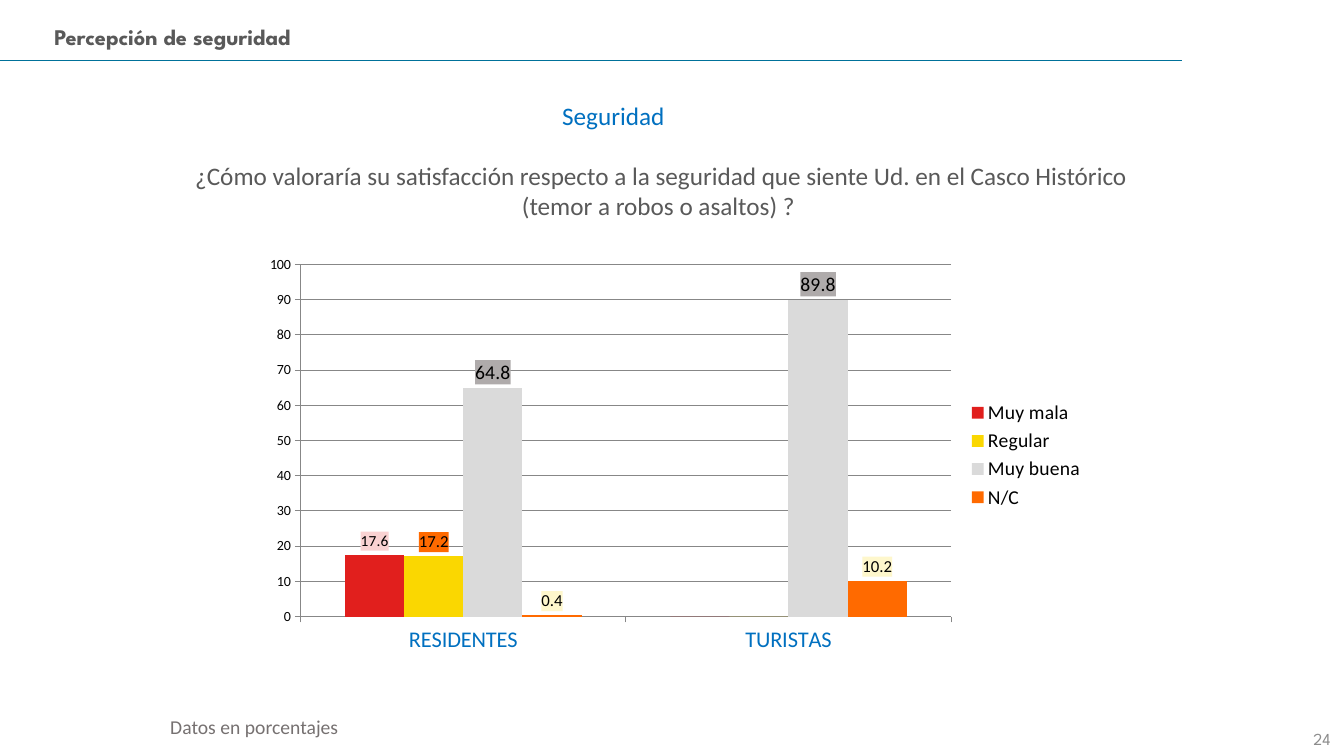
from lxml import etree
from pptx import Presentation
from pptx.chart.data import CategoryChartData
from pptx.dml.color import RGBColor
from pptx.enum.chart import XL_CHART_TYPE, XL_LABEL_POSITION, XL_LEGEND_POSITION, XL_TICK_MARK
from pptx.enum.shapes import MSO_CONNECTOR
from pptx.enum.text import MSO_ANCHOR, PP_ALIGN
from pptx.oxml import parse_xml
from pptx.oxml.ns import nsdecls, qn
from pptx.util import Pt

LEFT, CENTER, RIGHT = PP_ALIGN.LEFT, PP_ALIGN.CENTER, PP_ALIGN.RIGHT
TOP, BOTTOM = MSO_ANCHOR.TOP, MSO_ANCHOR.BOTTOM
OUTSIDE, NO_TICK = XL_TICK_MARK.OUTSIDE, XL_TICK_MARK.NONE

BLACK = RGBColor(0x00, 0x00, 0x00)
TEAL = RGBColor(0x00, 0x71, 0x9A)
BLUE = RGBColor(0x00, 0x70, 0xC0)
DARK_GRAY = RGBColor(0x59, 0x59, 0x59)
NOTE_GRAY = RGBColor(0x76, 0x71, 0x71)
NUMBER_GRAY = RGBColor(0x8C, 0x8C, 0x8C)
AXIS_GRAY = RGBColor(0x87, 0x87, 0x87)
RED = RGBColor(0xE1, 0x1F, 0x1D)
YELLOW = RGBColor(0xFA, 0xD7, 0x01)
LIGHT_GRAY = RGBColor(0xDA, 0xDA, 0xDA)
ORANGE = RGBColor(0xFF, 0x6A, 0x00)
PINK = RGBColor(0xF9, 0xD2, 0xD2)
MID_GRAY = RGBColor(0xAF, 0xAB, 0xAB)
CREAM = RGBColor(0xFE, 0xF7, 0xCC)

HEADING_FONT, BODY_FONT = "League Spartan", "Calibri"

CATEGORIES = ["RESIDENTES", "TURISTAS"]
# name, values, bar colour, label fill, label size
RATINGS = [
    ("Muy mala", (17.6, 0), RED, PINK, 11),
    ("Regular", (17.2, 0), YELLOW, ORANGE, 12),
    ("Muy buena", (64.8, 89.8), LIGHT_GRAY, MID_GRAY, 14),
    ("N/C", (0.4, 10.2), ORANGE, CREAM, 12),
]


class SlideBuilder:
    def __init__(self, slide):
        self.slide = slide

    def style_font(self, font, size, color, name=BODY_FONT, bold=False):
        font.size, font.name, font.bold = Pt(size), name, bold
        font.color.rgb = color

    def text(self, box, words, size, color, align=LEFT, anchor=TOP, name=BODY_FONT, bold=False):
        shape = self.slide.shapes.add_textbox(*map(Pt, box))
        frame = shape.text_frame
        frame.word_wrap = True
        frame.vertical_anchor = anchor
        paragraph = frame.paragraphs[0]
        paragraph.alignment = align
        run = paragraph.add_run()
        run.text = words
        self.style_font(run.font, size, color, name, bold)

    def line(self, start, end, color, width):
        connector = self.slide.shapes.add_connector(
            MSO_CONNECTOR.STRAIGHT, *map(Pt, start + end))
        connector.line.color.rgb = color
        connector.line.width = Pt(width)
        properties = connector._element.spPr
        etree.SubElement(properties, qn("a:effectLst"))

    def style_axis(self, axis, size, color):
        axis.major_tick_mark = OUTSIDE
        axis.minor_tick_mark = NO_TICK
        axis.format.line.color.rgb = AXIS_GRAY
        self.style_font(axis.tick_labels.font, size, color)

    def style_series(self, series, values, color, label_fill, label_size):
        series.format.fill.solid()
        series.format.fill.fore_color.rgb = color
        series.invert_if_negative = False
        labels = series.data_labels
        labels.show_value = True
        labels.number_format = "#,##0.0"
        labels.number_format_is_linked = False
        labels.position = XL_LABEL_POSITION.OUTSIDE_END
        self.style_font(labels.font, label_size, BLACK)
        # Label background, and no label on empty bars
        element = series._element.find(qn("c:dLbls"))
        element.find(qn("c:txPr")).addprevious(parse_xml(
            f'<c:spPr {nsdecls("c", "a")}><a:solidFill><a:srgbClr val="{label_fill}"/>'
            '</a:solidFill></c:spPr>'))
        hidden = [index for index, value in enumerate(values) if value == 0]
        for position, index in enumerate(hidden):
            element.insert(position, parse_xml(
                f'<c:dLbl {nsdecls("c")}><c:idx val="{index}"/><c:delete val="1"/></c:dLbl>'))

    def place_plot(self, chart, **fractions):
        area = chart._chartSpace.find(".//" + qn("c:plotArea"))
        for layout in area.findall(qn("c:layout")):
            area.remove(layout)
        sizes = "".join(f'<c:{key} val="{value}"/>' for key, value in fractions.items())
        area.insert(0, parse_xml(
            f'<c:layout {nsdecls("c")}><c:manualLayout><c:layoutTarget val="inner"/>'
            f'<c:xMode val="edge"/><c:yMode val="edge"/>{sizes}</c:manualLayout></c:layout>'))

    def column_chart(self, box, categories, ratings):
        data = CategoryChartData()
        data.categories = categories
        for name, values, *_ in ratings:
            data.add_series(name, values)
        chart = self.slide.shapes.add_chart(
            XL_CHART_TYPE.COLUMN_CLUSTERED, *map(Pt, box), data).chart
        self.style_font(chart.font, 10, BLACK)
        chart.has_title = False
        # Axes
        self.style_axis(chart.category_axis, 16, BLUE)
        value_axis = chart.value_axis
        self.style_axis(value_axis, 10, BLACK)
        value_axis.minimum_scale, value_axis.maximum_scale = 0, 100
        value_axis.major_unit = 10
        value_axis.major_gridlines.format.line.color.rgb = AXIS_GRAY
        # Legend
        chart.has_legend = True
        chart.legend.position = XL_LEGEND_POSITION.RIGHT
        chart.legend.include_in_layout = False
        self.style_font(chart.legend.font, 14, BLACK)
        # Columns
        plot = chart.plots[0]
        plot.gap_width, plot.overlap = 150, 0
        plot.vary_by_categories = False
        for series, (_, *style) in zip(plot.series, ratings):
            self.style_series(series, *style)
        self.place_plot(chart, x=0.06, y=0.04, w=0.77, h=0.85)


def main():
    presentation = Presentation()
    presentation.slide_width, presentation.slide_height = Pt(960), Pt(540)
    builder = SlideBuilder(presentation.slides.add_slide(presentation.slide_layouts[6]))

    # Header and page number
    builder.line((0, 43.2), (844.6, 43.2), TEAL, 1)
    builder.text((31.7, 13, 841, 26.6), "Percepción de seguridad", 16, DARK_GRAY,
                 name=HEADING_FONT, bold=True)
    builder.text((741.6, 509.8, 216, 28.8), "24", 12, NUMBER_GRAY, RIGHT, BOTTOM,
                 name=HEADING_FONT)

    # Topic and question
    builder.text((109.4, 68.4, 657.4, 28.8), "Seguridad", 18, BLUE, CENTER)
    builder.text((131, 110.9, 682.6, 51),
                 "¿Cómo valoraría su satisfacción respecto a la seguridad que siente Ud. "
                 "en el Casco Histórico (temor a robos o asaltos) ? ",
                 18, DARK_GRAY, CENTER)

    # Ratings chart and its note
    builder.column_chart((178.6, 177.1, 603.4, 295.9), CATEGORIES, RATINGS)
    builder.text((114.5, 506.9, 689.8, 24.5), "Datos en porcentajes", 14, NOTE_GRAY)

    presentation.save("out.pptx")


if __name__ == "__main__":
    main()
